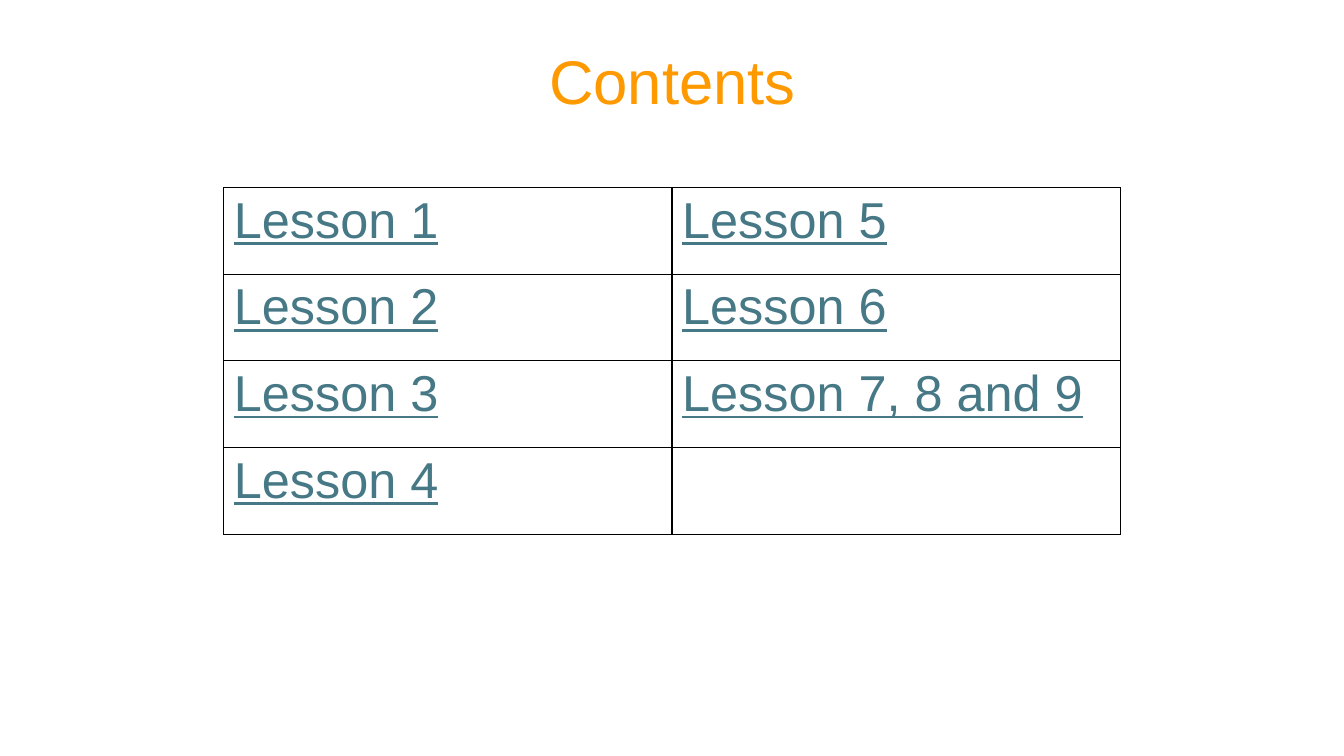
from lxml import etree
from pptx import Presentation
from pptx.dml.color import RGBColor
from pptx.enum import text as t
from pptx.oxml import ns
from pptx.util import Inches, Pt

TITLE = "Contents"
ROWS = [
    ("Lesson 1", "Lesson 5"),
    ("Lesson 2", "Lesson 6"),
    ("Lesson 3", "Lesson 7, 8 and 9"),
    ("Lesson 4", ""),
]
ORANGE, TEAL, BLACK = "FF9900", "467886", "000000"
LEFT, TOP, WIDE, HIGH = 2.22, 1.86, 8.89, 0.86


def style(par, size, color):
    font = par.font
    font.name = "Arial"
    font.size = Pt(size)
    font.color.rgb = RGBColor.from_string(color)


def border(cell):
    props = cell._tc.get_or_add_tcPr()
    for i, side in enumerate(("lnL", "lnR", "lnT", "lnB")):
        line = etree.Element(ns.qn("a:" + side), w=str(Pt(1)))
        fill = etree.SubElement(line, ns.qn("a:solidFill"))
        etree.SubElement(fill, ns.qn("a:srgbClr"), val=BLACK)
        props.insert(i, line)


def main():
    prs = Presentation()
    prs.slide_width, prs.slide_height = Inches(13.33), Inches(7.5)
    slide = prs.slides.add_slide(prs.slide_layouts[5])

    title = slide.shapes.title
    title.left, title.top = Inches(0.92), Inches(0.11)
    title.width, title.height = Inches(11.5), Inches(1.45)
    frame = title.text_frame
    frame.text = TITLE
    frame.vertical_anchor = t.MSO_ANCHOR.MIDDLE
    head = frame.paragraphs[0]
    head.alignment = t.PP_ALIGN.CENTER
    head.line_spacing = 0.9
    style(head, 44, ORANGE)

    table = slide.shapes.add_table(
        len(ROWS), len(ROWS[0]), Inches(LEFT), Inches(TOP),
        Inches(WIDE), Inches(HIGH * len(ROWS))).table
    table.first_row = table.horz_banding = False
    for r, row in enumerate(ROWS):
        for c, label in enumerate(row):
            cell = table.cell(r, c)
            cell.text = label
            cell.fill.background()
            border(cell)
            par = cell.text_frame.paragraphs[0]
            style(par, 36, TEAL)
            par.font.underline = True

    prs.save("out.pptx")


if __name__ == "__main__":
    main()
